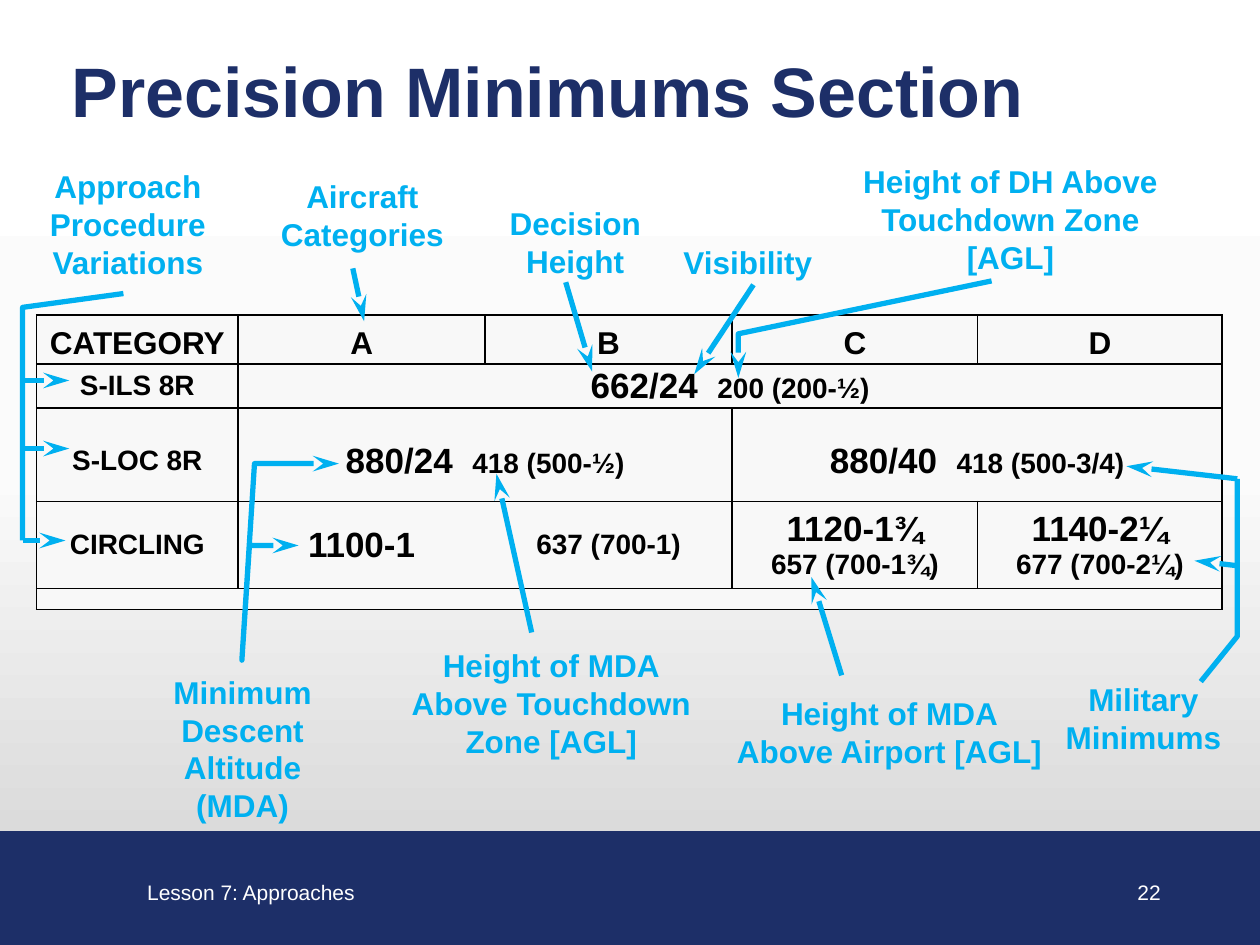
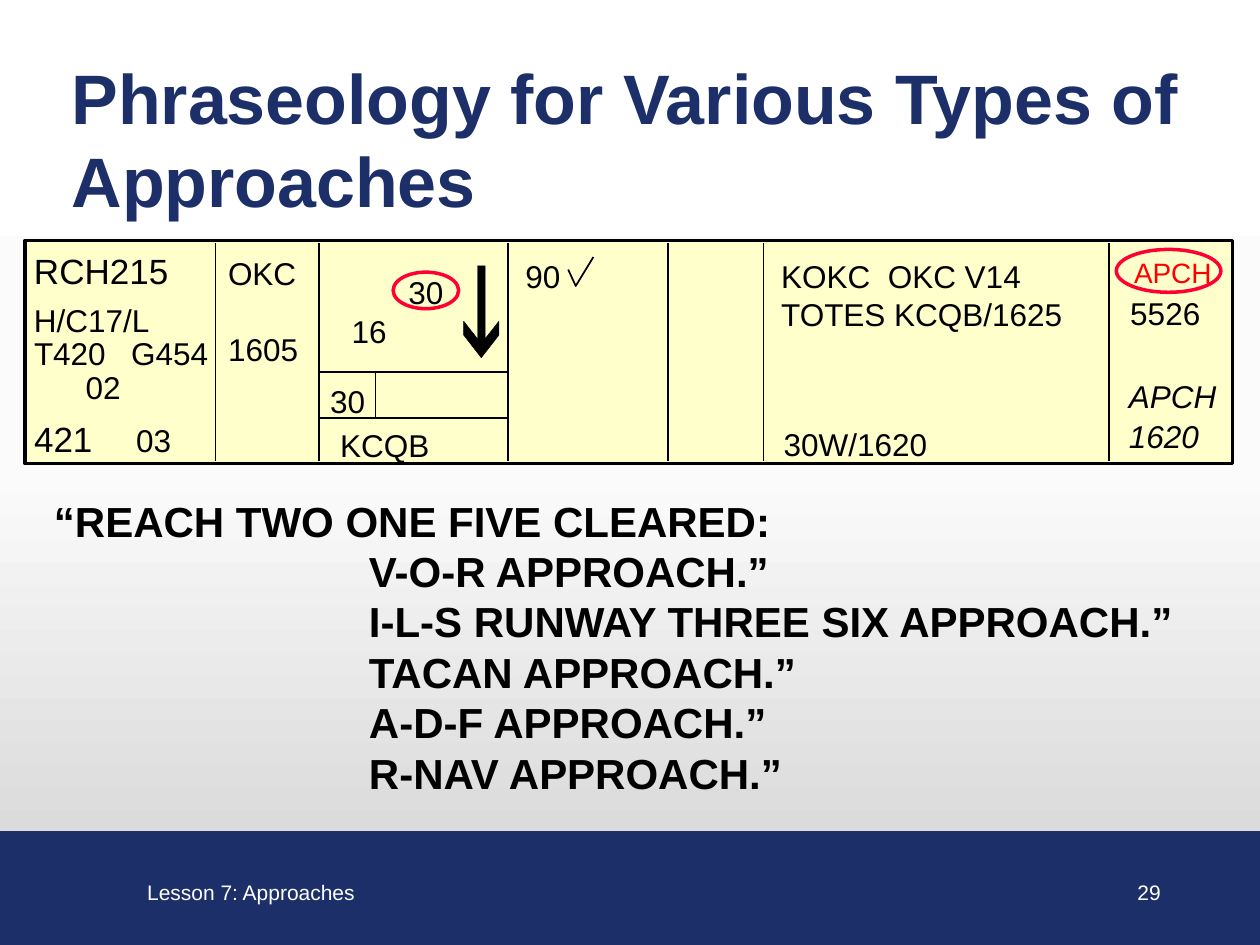
from copy import deepcopy
from pptx import Presentation
from pptx.dml.color import RGBColor
from pptx.enum.shapes import MSO_CONNECTOR, MSO_SHAPE
from pptx.enum.text import MSO_ANCHOR, PP_ALIGN
from pptx.oxml import parse_xml
from pptx.oxml.ns import nsdecls
from pptx.util import Emu, Pt

NAVY = RGBColor(0x1D, 0x2F, 0x68)
SKY = RGBColor(0x00, 0xB0, 0xF0)
BLACK = RGBColor(0x00, 0x00, 0x00)
WHITE = RGBColor(0xFF, 0xFF, 0xFF)
PALE = RGBColor(0xF8, 0xF8, 0xF8)
CREAM = RGBColor(0xFF, 0xFF, 0xCC)
RED = RGBColor(0xFF, 0x00, 0x00)
ROSE = RGBColor(0xFF, 0x00, 0x33)
FONT = "Arial"

deck = Presentation()
deck.slide_width, deck.slide_height = Emu(9144000), Emu(6858000)
UNIT = deck.slide_width // 10


def put(text, at=None, frame=None, size=18, small=16, color=BLACK, bold=False,
        slant=False, align=PP_ALIGN.LEFT, inset=(0.1, 0.05)):
    if frame is None:
        box = page.shapes.add_textbox(*[Emu(round(v * UNIT)) for v in at])
        frame = box.text_frame
        frame.word_wrap = True
        frame.margin_left = frame.margin_right = Emu(round(inset[0] * UNIT))
        frame.margin_top = frame.margin_bottom = Emu(round(inset[1] * UNIT))
    for i, line in enumerate(text.split("\n")):
        para = frame.add_paragraph() if i else frame.paragraphs[0]
        para.alignment = align
        for part, points in zip(line.split("|"), (size, small)):
            if part:
                run = para.add_run()
                run.text = part
                font = run.font
                font.name, font.size = FONT, Pt(points)
                font.bold, font.italic = bold, slant
                font.color.rgb = color
    return frame


def draw(*spots, color=BLACK, width=1, ends=(), fill=None):
    dots = [(round(x * UNIT), round(y * UNIT)) for x, y in spots]
    if len(dots) == 2:
        item = page.shapes.add_connector(MSO_CONNECTOR.STRAIGHT, *dots[0], *dots[1])
    else:
        path = page.shapes.build_freeform(*dots[0], scale=1.0)
        path.add_line_segments(dots[1:], close=fill is not None)
        item = path.convert_to_shape()
        if fill is None:
            item.fill.background()
        else:
            item.fill.solid()
            item.fill.fore_color.rgb = fill
    item.line.color.rgb = color
    item.line.width = Pt(width)
    stroke = item.line._get_or_add_ln()
    for end in ends:
        stroke.append(parse_xml(
            f'<a:{end} {nsdecls("a")} type="stealth" w="med" len="lg"/>'))
    item._element.spPr.append(parse_xml(f'<a:effectLst {nsdecls("a")}/>'))


back = parse_xml(
    f'<p:bg {nsdecls("p", "a")}><p:bgPr><a:gradFill><a:gsLst>'
    + "".join(f'<a:gs pos="{pos}"><a:srgbClr val="{tone}"/></a:gs>' for pos, tone in
              ((0, "FFFFFF"), (50000, "FBFBFB"), (100000, "D0D0D0")))
    + '</a:gsLst><a:lin ang="5400000" scaled="0"/></a:gradFill>'
    '<a:effectLst/></p:bgPr></p:bg>')

pages = []
for title, top, tall, number in (
        ("Precision Minimums Section", 0.33, 0.77, "22"),
        ("Phraseology for Various Types of Approaches", 0.38, 1.33, "29")):
    page = deck.slides.add_slide(deck.slide_layouts[6])
    pages.append(page)
    page._element.cSld.insert(0, deepcopy(back))
    band = page.shapes.add_shape(
        MSO_SHAPE.RECTANGLE, 0, round(6.6 * UNIT), 10 * UNIT, round(0.9 * UNIT))
    band.shadow.inherit = False
    band.fill.solid()
    band.fill.fore_color.rgb = band.line.color.rgb = NAVY
    band.line.width = Pt(0.75)
    put("Lesson 7: Approaches", (1.07, 6.93, 2.4, 0.3), size=12, color=WHITE)
    put(number, (8.69, 6.93, 0.62, 0.3), size=12, color=WHITE, align=PP_ALIGN.RIGHT)
    put(title, (0.47, top, 9.27, tall), size=40, color=NAVY, bold=True)

page = pages[0]
cols = (1.6, 1.96, 1.96, 1.95, 1.94)
rows = (0.39, 0.35, 0.74, 0.69, 0.17)
grid = page.shapes.add_table(
    5, 5, *[round(v * UNIT) for v in (0.29, 2.5, sum(cols), sum(rows))]).table
for col, wide in zip(grid.columns, cols):
    col.width = Emu(round(wide * UNIT))
for row, tall in zip(grid.rows, rows):
    row.height = Emu(round(tall * UNIT))
for r, c, last in ((1, 1, 4), (2, 1, 2), (2, 3, 4), (4, 0, 4)):
    grid.cell(r, c).merge(grid.cell(r, last))

words = {
    (1, 1): "662/24  |200 (200-½)",
    (2, 1): "880/24  |418 (500-½)", (2, 3): "880/40  |418 (500-3/4)",
    (3, 1): "1100-1", (3, 2): "|637 (700-1)",
    (3, 3): "1120-1¾\n|657 (700-1¾)", (3, 4): "1140-2¼\n|677 (700-2¼)"}
words.update({(0, c): t for c, t in enumerate(("CATEGORY", "A", "B", "C", "D"))})
words.update({(r, 0): f"|{t}" for r, t in
              enumerate(("S-ILS 8R", "S-LOC 8R", "CIRCLING"), 1)})
drops = (0.06, 0, 0.1, 0, 0)
for r in range(5):
    for c in range(5):
        cell = grid.cell(r, c)
        cell.margin_left = cell.margin_right = cell.margin_bottom = 0
        cell.margin_top = Emu(round(drops[r] * UNIT))
        cell.vertical_anchor = MSO_ANCHOR.MIDDLE
        cell.fill.solid()
        cell.fill.fore_color.rgb = PALE
        if (r, c) in words:
            put(words[r, c], frame=cell.text_frame, size=20 if r else 18,
                bold=True, align=PP_ALIGN.CENTER)
        else:
            cell.text_frame.paragraphs[0].font.size = Pt(6)
        for i, side in enumerate("LRTB"):
            bare = (r, c, side) in ((3, 1, "R"), (3, 2, "L"))
            paint = ("<a:noFill/>" if bare else
                     f'<a:solidFill><a:srgbClr val="{BLACK}"/></a:solidFill>')
            cell._tc.get_or_add_tcPr().insert(i, parse_xml(
                f'<a:ln{side} {nsdecls("a")} w="12700">{paint}</a:ln{side}>'))

for text, *at in (
        ("Approach Procedure Variations", 0, 1.28, 2.03, 1),
        ("Aircraft Categories", 1.72, 1.36, 2.31, 0.7),
        ("Decision Height", 3.62, 1.57, 1.89, 0.7),
        ("Visibility", 4.99, 1.88, 1.89, 0.4),
        ("Height of DH Above Touchdown Zone [AGL]", 6.6, 1.24, 2.84, 1),
        ("Minimum Descent Altitude (MDA)", 1.09, 5.29, 1.67, 1.3),
        ("Height of MDA\nAbove Touchdown Zone [AGL]", 3.02, 5.08, 2.71, 1),
        ("Height of MDA\nAbove Airport [AGL]", 5.71, 5.46, 2.7, 0.7),
        ("Military Minimums", 8.15, 5.35, 1.85, 0.7)):
    put(text, at, color=SKY, bold=True, align=PP_ALIGN.CENTER)

for spots in (
        ((2.8, 2.13), (2.89, 2.55)),
        ((4.49, 2.24), (4.7, 2.95)),
        ((5.98, 2.26), (5.51, 2.97)),
        ((7.87, 2.23), (5.86, 2.65), (5.86, 3)),
        ((9.82, 3.8), (8.94, 3.7)),
        ((9.82, 4.49), (9.48, 4.45)),
        ((4.22, 5.02), (3.94, 3.76)),
        ((6.68, 5.36), (6.44, 4.58)),
        ((0.2, 3.02), (0.55, 3.02)),
        ((0.2, 3.56), (0.55, 3.56)),
        ((0.18, 4.29), (0.52, 4.29))):
    draw(*spots, color=SKY, width=3, ends=("tailEnd",))
draw((2.69, 3.68), (2.02, 3.68), (1.92, 5.24), (1.98, 4.33), (2.37, 4.33),
     color=SKY, width=3, ends=("headEnd", "tailEnd"))
draw((9.53, 5.41), (9.82, 5.05), (9.82, 3.8), color=SKY, width=3)
draw((0.98, 2.33), (0.18, 2.44), (0.18, 4.29), color=SKY, width=3)

page = pages[1]
draw((0.2, 3.68), (0.2, 1.91), (9.78, 1.91), (9.78, 3.68), width=2, fill=CREAM)
for x in (1.71, 2.53, 4.03, 5.3, 6.06, 8.8):
    draw((x, 1.93), (x, 3.66))
for y in (2.95, 3.32):
    draw((2.54, y), (4.03, y))
draw((2.98, 2.95), (2.98, 3.31))

for text, x, y, size in (
        ("RCH215", 0.27, 1.98, 20), ("H/C17/L", 0.27, 2.39, 18),
        ("T420", 0.27, 2.65, 18), ("G454", 1.04, 2.65, 18),
        ("02", 0.68, 2.92, 18), ("421", 0.27, 3.31, 20), ("03", 1.08, 3.34, 18),
        ("OKC", 1.81, 2.02, 18), ("1605", 1.81, 2.62, 18),
        ("30", 3.24, 2.17, 18), ("16", 2.79, 2.48, 18),
        ("30", 2.62, 3.03, 18), ("KCQB", 2.7, 3.38, 18), ("90", 4.17, 2.04, 18),
        ("KOKC  OKC V14\nTOTES KCQB/1625", 6.2, 2.04, 18),
        ("30W/1620", 6.22, 3.37, 18), ("5526", 8.97, 2.33, 18)):
    wide = 2.53 if "\n" in text else 1.3 if len(text) > 4 else 0.75
    put(text, (x, y, wide, 0.3 * (1 + text.count("\n"))), size=size, inset=(0, 0))
for text, y in (("APCH", 2.99), ("1620", 3.31)):
    put(text, (8.96, y, 0.8, 0.3), slant=True, inset=(0, 0))
put("APCH", (9, 2.03, 0.75, 0.25), size=16, color=RED, inset=(0, 0))

draw((3.79, 2.11), (3.79, 2.69), (3.68, 2.55), (3.68, 2.66), (3.82, 2.84),
     (3.96, 2.66), (3.96, 2.55), (3.85, 2.69), (3.85, 2.11), width=0.25, fill=BLACK)
draw((4.51, 2.14), (4.57, 2.27), (4.71, 2.04))
for at in ((3.12, 2.16, 0.52, 0.29), (8.86, 1.98, 0.83, 0.34)):
    ring = page.shapes.add_shape(MSO_SHAPE.OVAL, *[round(v * UNIT) for v in at])
    ring.shadow.inherit = False
    ring.fill.background()
    ring.line.color.rgb = ROSE
    ring.line.width = Pt(2)

speech = put("“REACH TWO ONE FIVE CLEARED:\nV-O-R APPROACH.”\n"
             "I-L-S RUNWAY THREE SIX APPROACH.”\nTACAN APPROACH.”\n"
             "A-D-F APPROACH.”\nR-NAV APPROACH.”",
             (0.33, 3.88, 9.31, 2.53), size=24, bold=True)
for para in speech.paragraphs[1:]:
    para._p.get_or_add_pPr().set("marL", str(round(2.5 * UNIT)))

deck.save("out.pptx")
